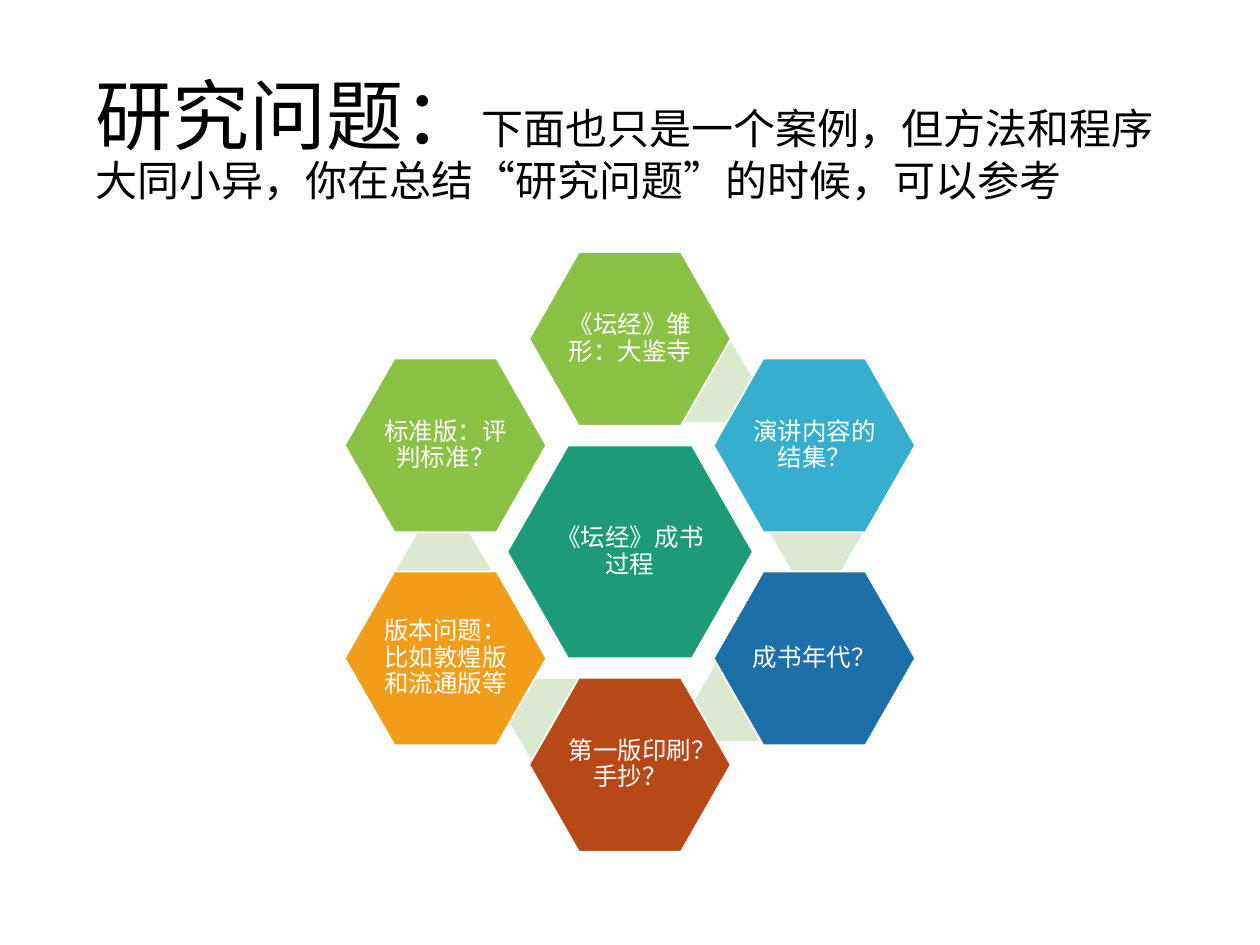
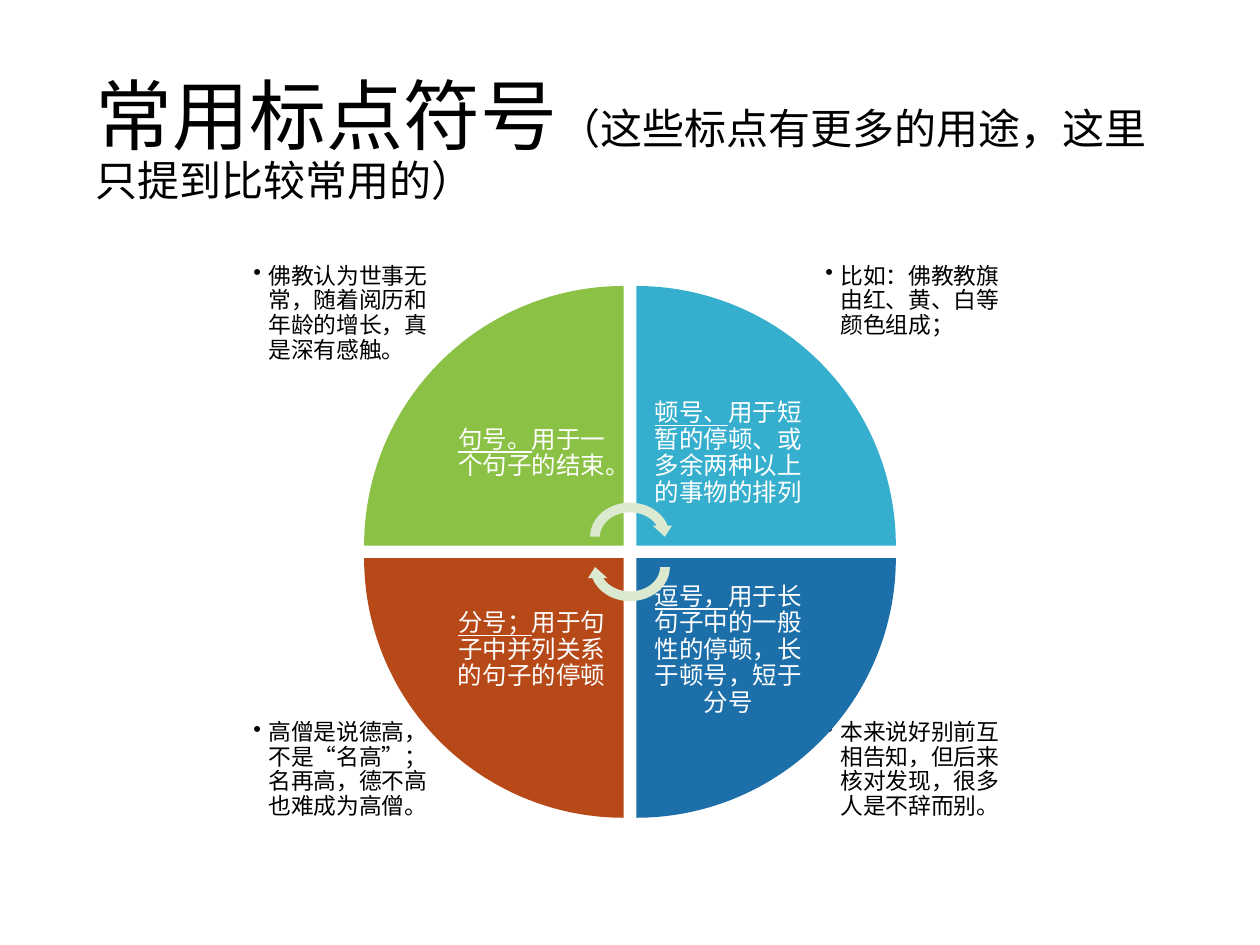
from dataclasses import dataclass
from math import cos, radians, sin
from typing import Optional

from lxml import etree
from pptx import Presentation
from pptx.dml.color import RGBColor
from pptx.enum.lang import MSO_LANGUAGE_ID
from pptx.enum.shapes import MSO_SHAPE
from pptx.enum.text import MSO_ANCHOR, PP_ALIGN
from pptx.oxml.ns import qn
from pptx.util import Inches, Pt

HEXAGON = MSO_SHAPE.HEXAGON
PIE_WEDGE = MSO_SHAPE.PIE_WEDGE
CIRCULAR_ARROW = MSO_SHAPE.CIRCULAR_ARROW
TOP, MIDDLE = MSO_ANCHOR.TOP, MSO_ANCHOR.MIDDLE
LEFT, CENTER = PP_ALIGN.LEFT, PP_ALIGN.CENTER
CHINESE = MSO_LANGUAGE_ID.SIMPLIFIED_CHINESE

WHITE = RGBColor(0xFF, 0xFF, 0xFF)
BLACK = RGBColor(0x00, 0x00, 0x00)
TEAL = RGBColor(0x1D, 0x9A, 0x78)
GREEN = RGBColor(0x8B, 0xC1, 0x45)
SKY = RGBColor(0x36, 0xAF, 0xCE)
BLUE = RGBColor(0x1D, 0x6F, 0xA9)
RUST = RGBColor(0xB7, 0x49, 0x19)
ORANGE = RGBColor(0xF1, 0x9D, 0x19)
PALE_GREEN = RGBColor(0xDA, 0xE9, 0xCF)

FONT = "Times New Roman"
CENTER_X, CENTER_Y = 5.0, 4.38
RING_RADIUS = 1.69
WEDGE_GAP = 0.1


@dataclass(frozen=True)
class Box:
    left: float
    top: float
    width: float
    height: float


@dataclass(frozen=True)
class Piece:
    text: str
    size: float
    color: RGBColor
    underline: bool = False


@dataclass(frozen=True)
class Question:
    text: str
    fill: RGBColor
    link: Optional[tuple[float, float]] = None


@dataclass(frozen=True)
class Mark:
    name: str
    usage: str
    example: str
    fill: RGBColor
    column: int
    row: int
    rotation: int


QUESTIONS = [
    Question("《坛经》雏形：大鉴寺", GREEN, (5.25, 2.72)),
    Question("演讲内容的结集？", SKY, (6.11, 3.91)),
    Question("成书年代？", BLUE, (5.51, 5.25)),
    Question("第一版印刷？手抄？", RUST, (4.03, 5.39)),
    Question("版本问题：比如敦煌版和流通版等", ORANGE, (3.15, 4.2)),
    Question("标准版：评判标准？", GREEN),
]

MARKS = [
    Mark("句号。", "用于一个句子的结束。",
         "佛教认为世事无常，随着阅历和年龄的增长，真是深有感触。", GREEN, 0, 0, 0),
    Mark("顿号、", "用于短暂的停顿、或多余两种以上的事物的排列",
         "比如：佛教教旗由红、黄、白等颜色组成；", SKY, 1, 0, 90),
    Mark("逗号，", "用于长句子中的一般性的停顿，长于顿号，短于分号",
         "本来说好别前互相告知，但后来核对发现，很多人是不辞而别。", BLUE, 1, 1, 180),
    Mark("分号；", "用于句子中并列关系的句子的停顿",
         "高僧是说德高，不是“名高”；名再高，德不高也难成为高僧。", RUST, 0, 1, 270),
]


def centered(x: float, y: float, width: float, height: float) -> Box:
    return Box(x - width / 2, y - height / 2, width, height)


def quadrant(mark: Mark, width: float, height: float, gap_x: float, gap_y: float) -> Box:
    left = CENTER_X + gap_x / 2 if mark.column else CENTER_X - gap_x / 2 - width
    top = CENTER_Y + gap_y / 2 if mark.row else CENTER_Y - gap_y / 2 - height
    return Box(left, top, width, height)


def place(box: Box) -> tuple:
    return Inches(box.left), Inches(box.top), Inches(box.width), Inches(box.height)


def add_figure(slide, kind, box: Box, fill: RGBColor, rotation: float = 0):
    shape = slide.shapes.add_shape(kind, *place(box))
    shape.shadow.inherit = False
    shape.fill.solid()
    shape.fill.fore_color.rgb = fill
    shape.line.fill.background()
    shape.rotation = rotation
    return shape


def add_text(slide, box: Box, pieces: list[Piece], inset: float,
             alignment=CENTER, anchor=MIDDLE):
    frame = slide.shapes.add_textbox(*place(box)).text_frame
    frame.word_wrap = True
    frame.vertical_anchor = anchor
    frame.margin_left = frame.margin_right = Inches(inset)
    frame.margin_top = frame.margin_bottom = Inches(inset)
    paragraph = frame.paragraphs[0]
    paragraph.alignment = alignment
    paragraph.line_spacing = 0.9
    for piece in pieces:
        run = paragraph.add_run()
        run.text = piece.text
        run.font.name = FONT
        run.font.size = Pt(piece.size)
        run.font.color.rgb = piece.color
        run.font.underline = piece.underline
        run.font.language_id = CHINESE
    return paragraph


def add_title(slide, heading: str, remark: str) -> None:
    pieces = [Piece(heading, 44, BLACK), Piece(remark, 24, BLACK)]
    add_text(slide, Box(0.69, 0.4, 8.62, 1.45), pieces, 0.07, LEFT)


def add_bullet(paragraph) -> None:
    properties = paragraph._p.get_or_add_pPr()
    properties.set("marL", str(Inches(0.12)))
    properties.set("indent", str(Inches(-0.12)))
    etree.SubElement(properties, qn("a:buChar")).set("char", "•")


def add_hexagon(slide, x: float, y: float, width: float, height: float,
                text: str, fill: RGBColor) -> None:
    hexagon = add_figure(slide, HEXAGON, centered(x, y, width, height), fill)
    hexagon.adjustments[0] = 0.286
    hexagon.line.color.rgb = WHITE
    hexagon.line.width = Pt(1)
    label_box = centered(x, y, width * 0.67, height * 0.67)
    add_text(slide, label_box, [Piece(text, 14, WHITE)], 0.02)


def build_questions(slide) -> None:
    add_title(slide, "研究问题：",
              "下面也只是一个案例，但方法和程序大同小异，你在总结“研究问题”的时候，可以参考")
    add_hexagon(slide, CENTER_X, CENTER_Y, 1.95, 1.69, "《坛经》成书过程", TEAL)
    for index, question in enumerate(QUESTIONS):
        if question.link:
            link = add_figure(slide, HEXAGON, Box(*question.link, 0.74, 0.63), PALE_GREEN)
            link.adjustments[0] = 0.289
        angle = radians(index * 360 / len(QUESTIONS))
        x = CENTER_X + RING_RADIUS * sin(angle)
        y = CENTER_Y - RING_RADIUS * cos(angle)
        add_hexagon(slide, x, y, 1.6, 1.38, question.text, question.fill)


def build_punctuation(slide) -> None:
    add_title(slide, "常用标点符号", "（这些标点有更多的用途，这里只提到比较常用的）")
    for mark in MARKS:
        example_box = quadrant(mark, 1.58, 1.08, 2.96, 2.54)
        add_bullet(add_text(slide, example_box, [Piece(mark.example, 13, BLACK)],
                            0.07, LEFT, TOP))
    for mark in MARKS:
        wedge_box = quadrant(mark, 2.06, 2.06, WEDGE_GAP, WEDGE_GAP)
        add_figure(slide, PIE_WEDGE, wedge_box, mark.fill, mark.rotation)
        pieces = [Piece(mark.name, 14, WHITE, True), Piece(mark.usage, 14, WHITE)]
        add_text(slide, quadrant(mark, 1.46, 1.46, WEDGE_GAP, WEDGE_GAP), pieces, 0.11)
    for offset, rotation in ((-0.12, 0), (0.12, 180)):
        arrow_box = centered(CENTER_X, CENTER_Y + offset, 0.71, 0.62)
        add_figure(slide, CIRCULAR_ARROW, arrow_box, PALE_GREEN, rotation)


def main() -> None:
    presentation = Presentation()
    presentation.slide_width = Inches(10)
    presentation.slide_height = Inches(7.5)
    blank = presentation.slide_layouts[6]
    for build in (build_questions, build_punctuation):
        build(presentation.slides.add_slide(blank))
    presentation.save("out.pptx")


if __name__ == "__main__":
    main()
